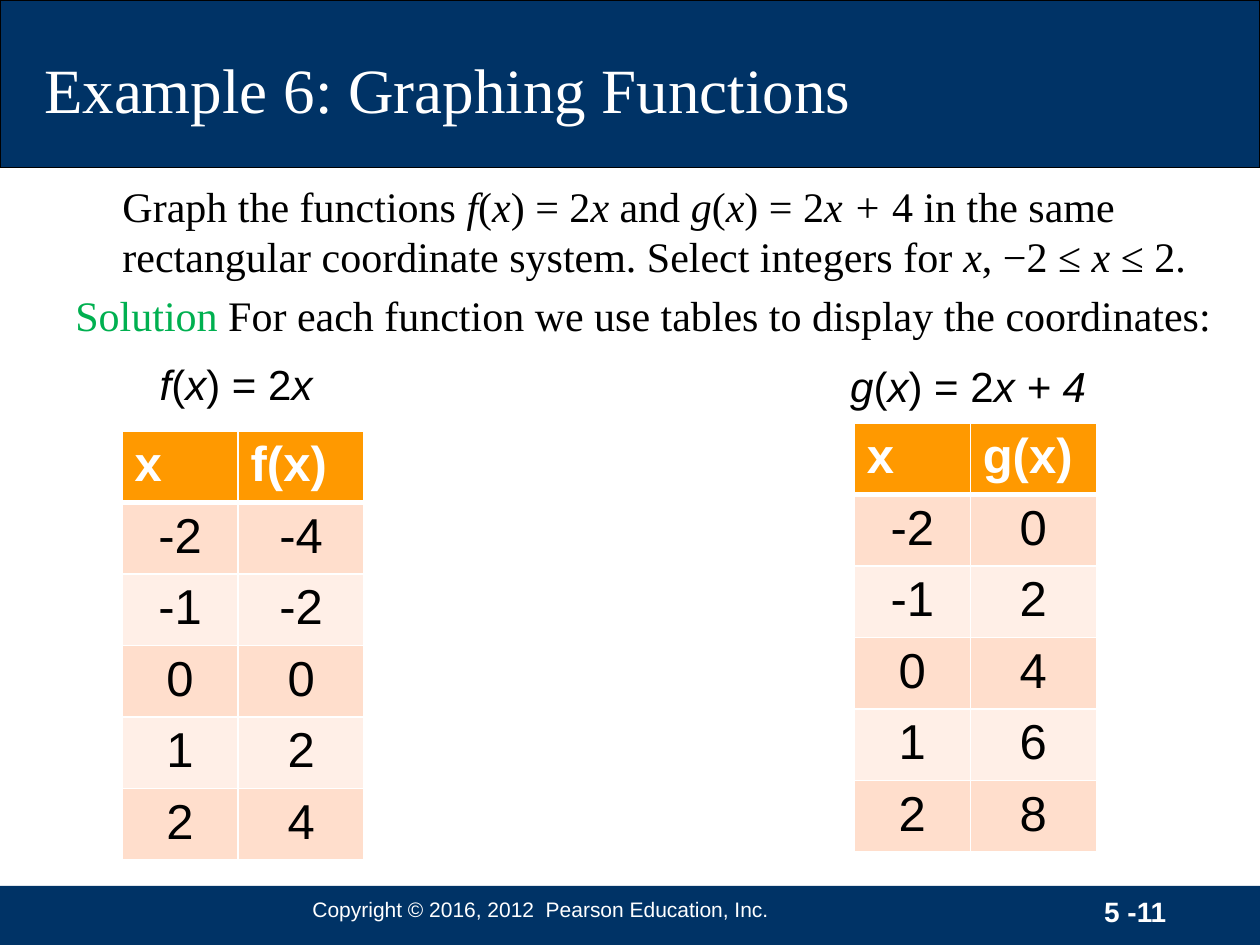
from lxml.etree import SubElement as Sub
from pptx import Presentation
from pptx.dml.color import RGBColor as Rgb
from pptx.enum.shapes import MSO_SHAPE as Shape
from pptx.enum.text import MSO_ANCHOR as Anchor, PP_ALIGN as Align
from pptx.oxml.ns import qn
from pptx.util import Cm, Pt

HUES = {
    "navy": "003366", "white": "FFFFFF", "black": "000000", "green": "00B050",
    "head": "FF9900", "dark": "FFDECC", "light": "FFEFE7",
}
SERIF, SANS = "Times New Roman", "Arial"
VALUES = range(-2, 3)


def hue(name):
    return Rgb.from_string(HUES[name])


def style(target, **form):
    for key, value in form.items():
        setattr(target, key, value)


class Page:
    def __init__(self, deck):
        self.slide = deck.slides.add_slide(deck.slide_layouts[6])
        self.shapes = self.slide.shapes

    def bar(self, top, high, line=None):
        bar = self.shapes.add_shape(Shape.RECTANGLE, 0, Cm(top), Cm(25.4), Cm(high))
        bar.shadow.inherit = False
        bar.fill.solid()
        bar.fill.fore_color.rgb = hue("navy")
        if line:
            bar.line.color.rgb = hue(line)
            bar.line.width = Pt(0.75)
        else:
            bar.line.fill.background()

    def words(self, para, text, color, **font):
        """Add runs to a paragraph; text between asterisks is italic."""
        for i, part in enumerate(text.split("*")):
            if part:
                run = para.add_run()
                run.text = part
                style(run.font, italic=i % 2 == 1, **font)
                run.font.color.rgb = hue(color)

    def text(self, at, paras, color="black", frame=None, **font):
        """Add a text box; each paragraph is a list of (text, colour) pairs."""
        box = self.shapes.add_textbox(*map(Cm, at)).text_frame
        style(box, word_wrap=True, **(frame or {}))
        for i, parts in enumerate(paras):
            para = box.add_paragraph() if i else box.paragraphs[0]
            if i:
                para.space_before = Pt(4.8)
            for part, tint in parts:
                self.words(para, part, tint or color, **font)
        return box

    def edge(self, cell, **widths):
        """Draw white cell borders, with widths in points by side."""
        props = cell._tc.get_or_add_tcPr()
        for side in "LRTB":
            line = Sub(props, qn(f"a:ln{side}"), w=str(Pt(widths.get(side, 1))))
            fill = Sub(line, qn("a:solidFill"))
            Sub(fill, qn("a:srgbClr"), val=HUES["white"])

    def table(self, left, top, rows):
        high = 1.44
        grid = self.shapes.add_table(
            len(rows), 2, Cm(left), Cm(top), Cm(4.88), Cm(high * len(rows))).table
        for col, wide in zip(grid.columns, (2.34, 2.54)):
            col.width = Cm(wide)
        for r, row in enumerate(rows):
            grid.rows[r].height = Cm(high)
            for c, value in enumerate(row):
                cell = grid.cell(r, c)
                self.edge(cell, B=1 if r else 3, T=3 if r == 1 else 1)
                cell.fill.solid()
                fill = ("dark" if r % 2 else "light") if r else "head"
                cell.fill.fore_color.rgb = hue(fill)
                para = cell.text_frame.paragraphs[0]
                para.alignment = Align.CENTER if r else Align.LEFT
                self.words(para, str(value), "black" if r else "white",
                           name=SANS, size=Pt(28), bold=r == 0)


def main():
    deck = Presentation()
    style(deck, slide_width=Cm(25.4), slide_height=Cm(19.05))
    page = Page(deck)
    page.bar(0, 3.38, "black")
    page.bar(17.86, 1.19)

    page.text((5.72, 17.7, 10.16, 1.24),
              [[("Copyright © 2016, 2012  Pearson Education, Inc.", None)]], "white",
              dict(vertical_anchor=Anchor.MIDDLE, margin_left=Cm(0.58),
                   margin_right=0, margin_top=0, margin_bottom=0),
              name=SANS, size=Pt(12))
    page.text((21.54, 17.91, 3.86, 1.07), [[("5 -11", None)]], "white",
              dict(margin_left=Cm(0.72)), name=SANS, size=Pt(16), bold=True)
    page.text((0.64, 0.2, 22.86, 3.18), [[("Example 6: Graphing Functions", None)]],
              "white", dict(vertical_anchor=Anchor.MIDDLE), name=SERIF, size=Pt(36))

    task = ("Graph the functions *f*(*x*) = 2*x* and *g*(*x*) = 2*x + *4 in the same "
            "rectangular coordinate system. Select integers for *x*, −2 ≤ *x* ≤ 2.")
    answer = [("Solution", "green"),
              (" For each function we use tables to display the coordinates:", None)]
    body = page.text((1.27, 3.38, 23.5, 4.24), [[(task, None)], answer],
                     frame=dict(margin_top=Cm(0.25)), name=SERIF, size=Pt(24))
    body.paragraphs[0]._p.get_or_add_pPr().set("marL", str(Cm(0.95)))

    plots = [
        ("f", "2*x*", (2.97, 7.11, 3.86, 1.27), (2.46, 8.69), lambda x: 2 * x),
        ("g", "2*x + 4*", (16.89, 7.14, 5.54, 1.27), (17.22, 8.53), lambda x: 2 * x + 4),
    ]
    for name, rule, label, spot, func in plots:
        page.text(label, [[(f"*{name}*(*x*) = {rule}", None)]],
                  name=SANS, size=Pt(24))
        page.table(*spot, [("x", f"{name}(x)")] + [(x, func(x)) for x in VALUES])

    deck.save("out.pptx")


if __name__ == "__main__":
    main()
